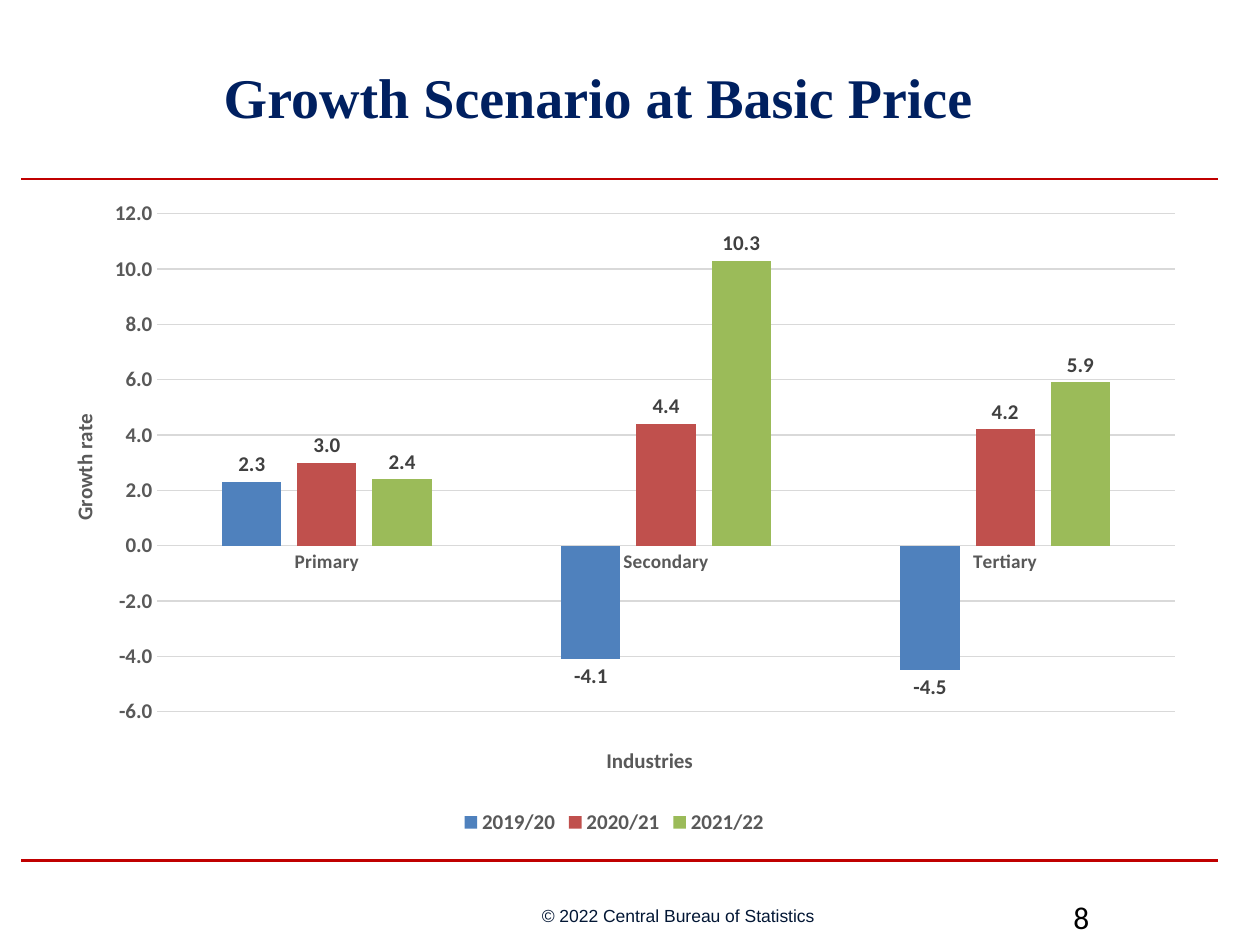
from dataclasses import dataclass

from pptx import Presentation
from pptx.chart.axis import _BaseAxis
from pptx.chart.data import CategoryChartData
from pptx.dml.color import RGBColor
from pptx.enum.chart import XL_CHART_TYPE, XL_LABEL_POSITION, XL_LEGEND_POSITION, XL_TICK_MARK
from pptx.enum.shapes import MSO_CONNECTOR
from pptx.enum.text import MSO_ANCHOR, PP_ALIGN
from pptx.oxml import parse_xml
from pptx.oxml.ns import nsdecls, qn
from pptx.oxml.xmlchemy import BaseOxmlElement
from pptx.slide import Slide
from pptx.text.text import Font
from pptx.util import Pt

COLORS = {
    "rule": "C00000",
    "title": "002060",
    "copyright": "031735",
    "black": "000000",
    "axis": "595959",
    "grid": "D9D9D9",
    "label": "404040",
}
CATEGORIES = ("Primary", "Secondary", "Tertiary")


@dataclass(frozen=True)
class TextItem:
    text: str
    box: tuple[float, float, float, float]
    font: str
    size: float
    color: str
    bold: bool = False
    align: PP_ALIGN = PP_ALIGN.LEFT
    anchor: MSO_ANCHOR = MSO_ANCHOR.MIDDLE
    insets: tuple[float, float] = (7.2, 3.6)


@dataclass(frozen=True)
class YearSeries:
    name: str
    values: tuple[float, ...]
    color: str


TEXTS = (
    TextItem("© 2022 Central Bureau of Statistics", (309.6, 516.25, 158.4, 13.7),
             "Arial", 10, "copyright", insets=(0, 0)),
    TextItem("Growth Scenario at Basic Price", (18, 18, 648, 74.2),
             "Times New Roman", 32, "title", bold=True, align=PP_ALIGN.CENTER),
    TextItem("8", (606.25, 509.75, 95.75, 16.55),
             "Calibri", 18, "black", anchor=MSO_ANCHOR.TOP),
)
SERIES = (
    YearSeries("2019/20", (2.3, -4.1, -4.5), "4F81BD"),
    YearSeries("2020/21", (3, 4.4, 4.2), "C0504D"),
    YearSeries("2021/22", (2.4, 10.3, 5.9), "9BBB59"),
)


def set_font(font: Font, name: str, size: float, color: str, bold: bool = False) -> None:
    font.name = name
    font.size = Pt(size)
    font.bold = bold
    font.color.rgb = RGBColor.from_string(COLORS[color])


def add_rule(slide: Slide, top: float) -> None:
    connector = slide.shapes.add_connector(
        MSO_CONNECTOR.STRAIGHT, Pt(12.25), Pt(top), Pt(696.25), Pt(top))
    connector.line.color.rgb = RGBColor.from_string(COLORS["rule"])
    connector.line.width = Pt(1.5)
    connector._element.spPr.append(parse_xml(f"<a:effectLst {nsdecls('a')}/>"))


def add_text(slide: Slide, item: TextItem) -> None:
    shape = slide.shapes.add_textbox(*(Pt(length) for length in item.box))
    frame = shape.text_frame
    frame.word_wrap = True
    frame.vertical_anchor = item.anchor
    frame.margin_left = frame.margin_right = Pt(item.insets[0])
    frame.margin_top = frame.margin_bottom = Pt(item.insets[1])
    paragraph = frame.paragraphs[0]
    paragraph.text = item.text
    paragraph.alignment = item.align
    set_font(paragraph.font, item.font, item.size, item.color, item.bold)


def set_layout(element: BaseOxmlElement, index: int, **fractions: float) -> None:
    for layout in element.findall(qn("c:layout")):
        element.remove(layout)
    target = '<c:layoutTarget val="inner"/>' if "w" in fractions else ""
    modes = "".join(f'<c:{key}Mode val="edge"/>' for key in ("x", "y"))
    values = "".join(f'<c:{key} val="{value}"/>' for key, value in fractions.items())
    element.insert(index, parse_xml(
        f"<c:layout {nsdecls('c')}><c:manualLayout>{target}{modes}{values}"
        "</c:manualLayout></c:layout>"))


def style_axis(axis: _BaseAxis, title: str, size: float, rotation: int,
               left: float, top: float) -> None:
    axis.major_tick_mark = axis.minor_tick_mark = XL_TICK_MARK.NONE
    set_font(axis.tick_labels.font, "Calibri", size, "axis", True)
    frame = axis.axis_title.text_frame
    frame.text = title
    set_font(frame.paragraphs[0].font, "Calibri", 12, "axis", True)
    frame._txBody.bodyPr.set("rot", str(rotation))
    frame._txBody.bodyPr.set("vert", "horz")
    set_layout(axis.axis_title._element, 1, x=left, y=top)


def add_growth_chart(slide: Slide) -> None:
    data = CategoryChartData(number_format="0.0")
    data.categories = CATEGORIES
    for year in SERIES:
        data.add_series(year.name, year.values)
    chart = slide.shapes.add_chart(
        XL_CHART_TYPE.COLUMN_CLUSTERED, Pt(18), Pt(108), Pt(666), Pt(372), data).chart
    set_font(chart.font, "Calibri", 10, "black")
    chart.has_title = False
    chart.has_legend = True
    chart.legend.position = XL_LEGEND_POSITION.BOTTOM
    chart.legend.include_in_layout = False
    set_font(chart.legend.font, "Calibri", 12, "axis", True)

    style_axis(chart.category_axis, "Industries", 11, 0, 0.49, 0.85)
    style_axis(chart.value_axis, "Growth rate", 12, -5400000, 0.03, 0.34)
    value_axis = chart.value_axis
    value_axis.minimum_scale, value_axis.maximum_scale = -6, 12
    value_axis.major_unit = 2
    value_axis.tick_labels.number_format = "0.0"
    value_axis.tick_labels.number_format_is_linked = False
    value_axis.format.line.fill.background()
    for line in (chart.category_axis.format.line, value_axis.major_gridlines.format.line):
        line.color.rgb = RGBColor.from_string(COLORS["grid"])
        line.width = Pt(0.75)

    plot = chart.plots[0]
    plot.gap_width, plot.overlap = 219, -27
    plot.vary_by_categories = False
    set_layout(plot._element.getparent(), 0, x=0.108, y=0.038, w=0.873, h=0.765)
    for series, year in zip(plot.series, SERIES):
        series.invert_if_negative = False
        series.format.fill.solid()
        series.format.fill.fore_color.rgb = RGBColor.from_string(year.color)
        labels = series.data_labels
        labels.show_value = True
        labels.position = XL_LABEL_POSITION.OUTSIDE_END
        labels.number_format = "0.0"
        labels.number_format_is_linked = False
        set_font(labels.font, "Calibri", 12, "label", True)


def main() -> None:
    presentation = Presentation()
    presentation.slide_width, presentation.slide_height = Pt(720), Pt(540)
    slide = presentation.slides.add_slide(presentation.slide_layouts[6])
    for top in (102.25, 491.75):
        add_rule(slide, top)
    for item in TEXTS:
        add_text(slide, item)
    add_growth_chart(slide)
    presentation.save("out.pptx")


if __name__ == "__main__":
    main()
